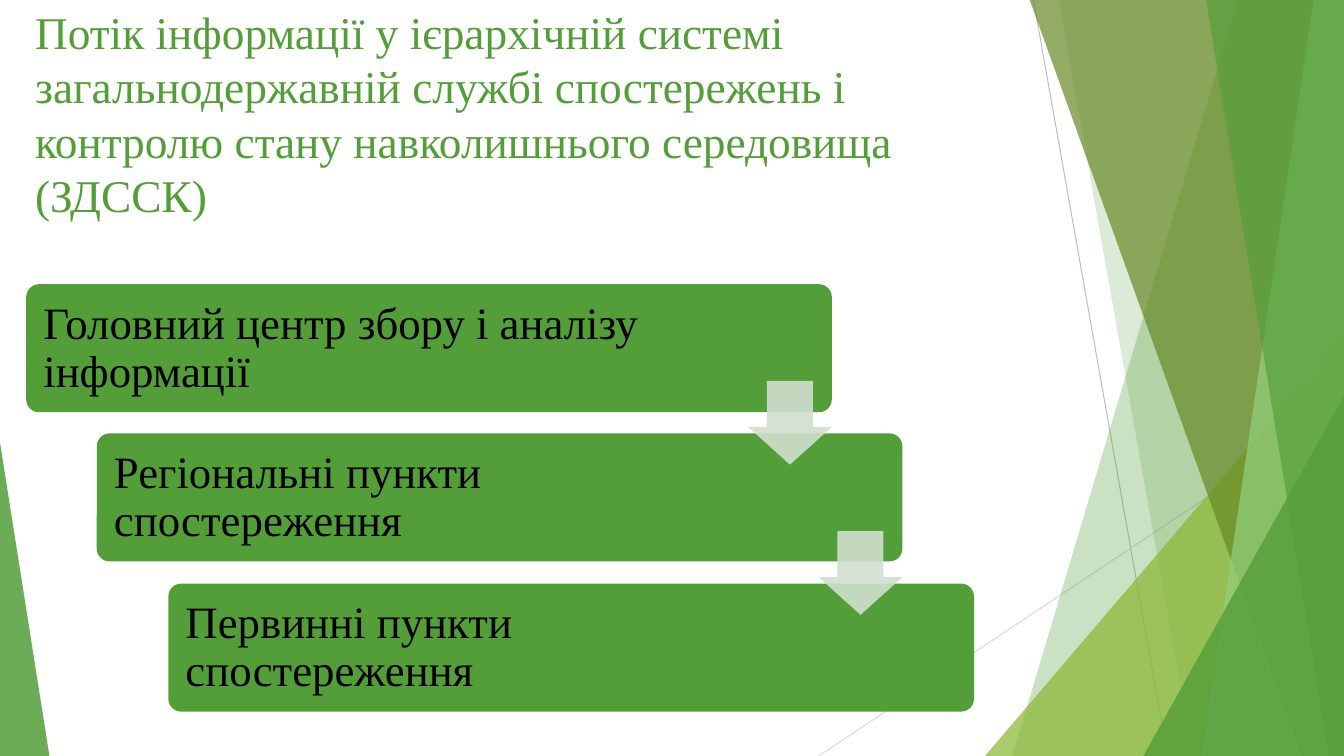
"""Builds the slide on the information flow in the state environmental monitoring service."""
from lxml import etree
from pptx import Presentation
from pptx.dml.color import RGBColor
from pptx.enum.shapes import MSO_CONNECTOR, MSO_SHAPE
from pptx.enum.text import MSO_ANCHOR
from pptx.oxml.ns import qn
from pptx.util import Pt

PX = 9144
STRAIGHT = MSO_CONNECTOR.STRAIGHT
TRIANGLE = MSO_SHAPE.ISOSCELES_TRIANGLE
ROUNDED = MSO_SHAPE.ROUNDED_RECTANGLE
DOWN_ARROW = MSO_SHAPE.DOWN_ARROW
TOP, MIDDLE = MSO_ANCHOR.TOP, MSO_ANCHOR.MIDDLE

GREEN = RGBColor(0x54, 0x9E, 0x39)
LIME = RGBColor(0x8A, 0xB8, 0x33)
OLIVE = RGBColor(0x67, 0x8A, 0x26)
LIGHT_GREEN = RGBColor(0x93, 0xD0, 0x7D)
ARROW_GREY = RGBColor(0xD1, 0xDF, 0xCE)
LINE_GREY = RGBColor(0xBF, 0xBF, 0xBF)
PALE_GREY = RGBColor(0xD9, 0xD9, 0xD9)
BLACK = RGBColor(0, 0, 0)

WIDTH, HEIGHT = 1333, 750

deck = Presentation()
deck.slide_width, deck.slide_height = WIDTH * PX, HEIGHT * PX
page = deck.slides.add_slide(deck.slide_layouts[6])


def paint(shape, color, opacity=100):
    shape.shadow.inherit = False
    shape.line.fill.background()
    shape.fill.solid()
    shape.fill.fore_color.rgb = color
    if opacity < 100:
        tint = shape.fill._xPr.find(".//" + qn("a:srgbClr"))
        etree.SubElement(tint, qn("a:alpha")).set("val", str(opacity * 1000))


def write(words, left, top, width, height, size, color, anchor, inset, spacing):
    box = page.shapes.add_textbox(left * PX, top * PX, width * PX, height * PX)
    frame = box.text_frame
    frame.word_wrap = True
    frame.vertical_anchor = anchor
    frame.margin_left = frame.margin_right = inset[0] * PX
    frame.margin_top = frame.margin_bottom = inset[1] * PX
    para = frame.paragraphs[0]
    para.text = words
    para.line_spacing = spacing
    para.font.name = "Times New Roman"
    para.font.size = Pt(size)
    para.font.color.rgb = color


for x1, y1, x2, y2, color in [
    (1025, 0, 1158, HEIGHT, LINE_GREY),
    (WIDTH, 403, 812, HEIGHT, PALE_GREY),
]:
    line = page.shapes.add_connector(STRAIGHT, x1 * PX, y1 * PX, x2 * PX, y2 * PX)
    line.line.color.rgb = color
    line.line.width = Pt(0.75)
    etree.SubElement(line._element.spPr, qn("a:effectLst"))

BANDS = "band"
for kind, *place, color, opacity in [
    (BANDS, 1228, 1004, GREEN, 30),
    (BANDS, 1050, 1183, GREEN, 20),
    (TRIANGLE, 977, 333, 356, 417, 1, LIME, 72),
    (BANDS, 1021, 1291, OLIVE, 70),
    (BANDS, 1303, 1192, LIGHT_GREEN, 70),
    (BANDS, 1196, 1318, GREEN, 65),
    (TRIANGLE, 1134, 393, 199, 357, 1, GREEN, 80),
    (TRIANGLE, 0, 439, 49, 311, 0, GREEN, 85),
]:
    if kind == BANDS:
        top_x, bottom_x = place
        outline = page.shapes.build_freeform(top_x, -1, scale=PX)
        outline.add_line_segments([(WIDTH, -1), (WIDTH, HEIGHT), (bottom_x, HEIGHT)])
        facet = outline.convert_to_shape()
    else:
        *frame, apex = place
        facet = page.shapes.add_shape(kind, *[length * PX for length in frame])
        facet.adjustments[0] = apex
    paint(facet, color, opacity)

write("Потік інформації у ієрархічній системі загальнодержавній службі спостережень "
      "і контролю стану навколишнього середовища (ЗДССК)",
      25, -1, 940, 244, 32.4, GREEN, TOP, (10, 5), 1)

LEVELS = [
    ("Головний центр збору і аналізу інформації", 662),
    ("Регіональні пункти спостереження", 638),
    ("Первинні пункти спостереження", 638),
]
STEP_X, STEP_Y = 70.5, 148.5
for index, (label, label_width) in enumerate(LEVELS):
    left, top = round(26 + index * STEP_X), round(282 + index * STEP_Y)
    card = page.shapes.add_shape(ROUNDED, left * PX, top * PX, 799 * PX, 127 * PX)
    card.adjustments[0] = 0.1
    paint(card, GREEN)
    write(label, left + 4, top + 4, label_width, 120, 32, BLACK, MIDDLE, (13, 13), 0.9)

for index in range(len(LEVELS) - 1):
    left, top = round(742 + index * STEP_X), round(378.5 + index * STEP_Y)
    arrow = page.shapes.add_shape(DOWN_ARROW, left * PX, top * PX, 83 * PX, 83 * PX)
    arrow.adjustments[0] = 0.55
    arrow.adjustments[1] = 0.45
    paint(arrow, ARROW_GREY, 90)

deck.save("out.pptx")
